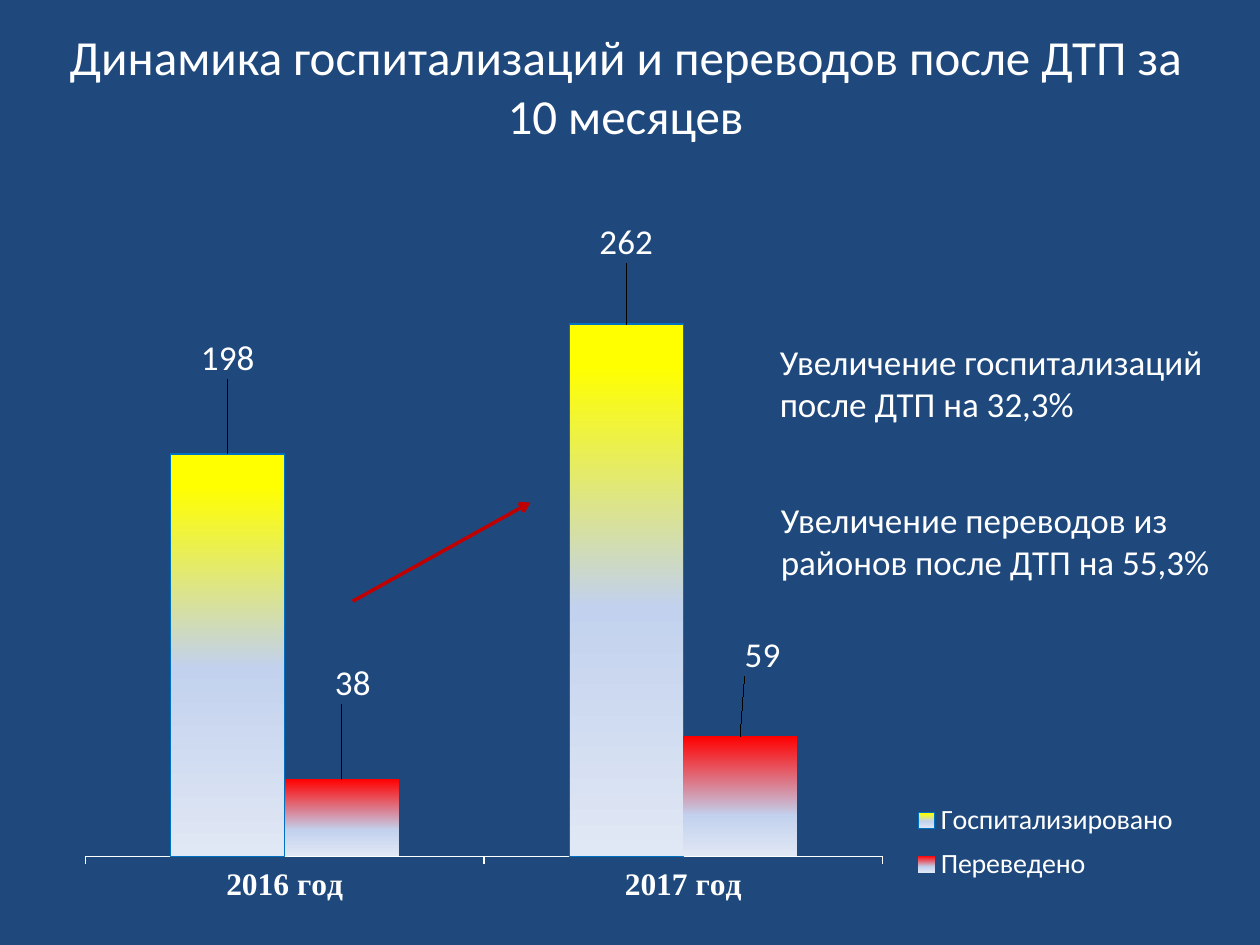
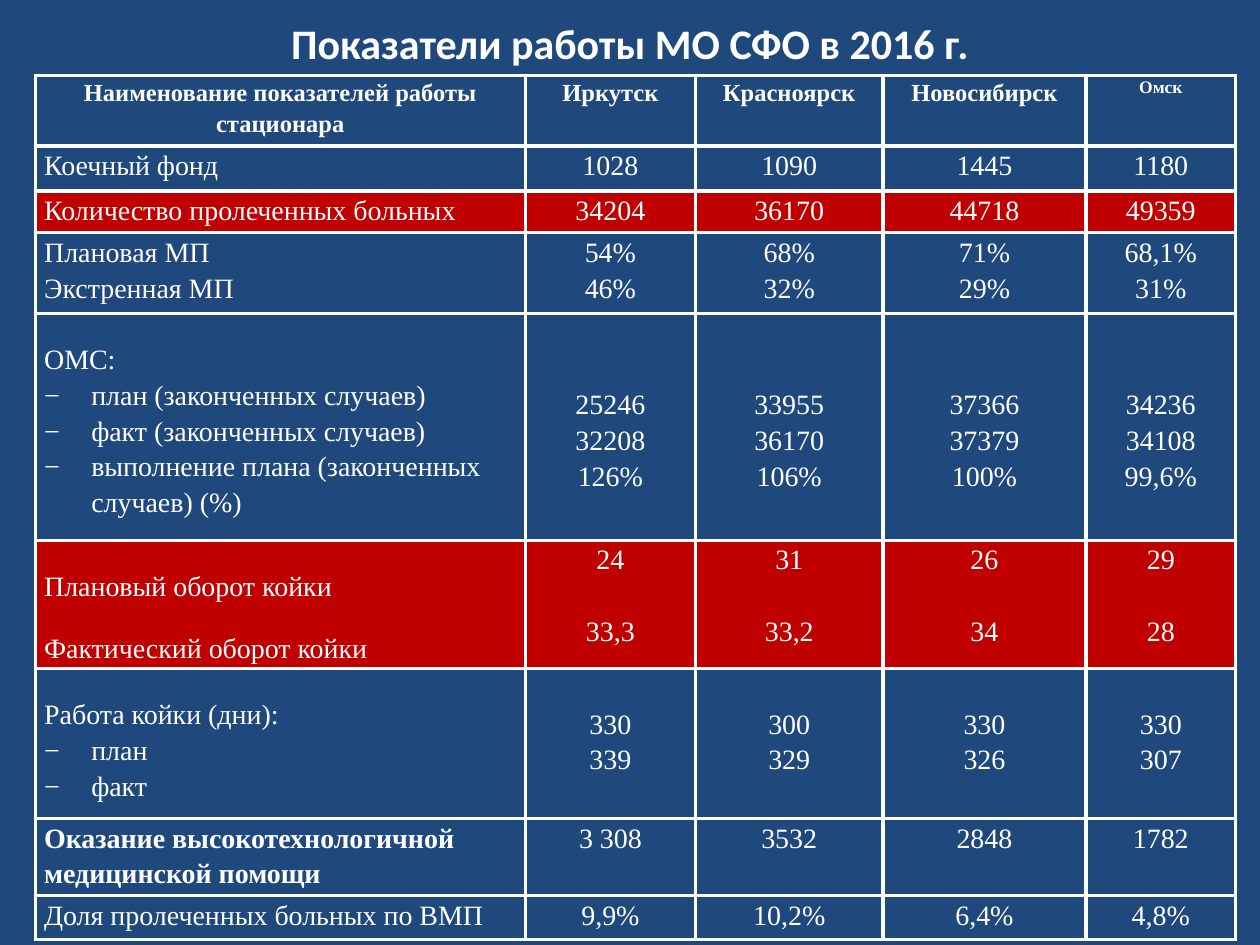
from lxml import etree
from pptx import Presentation
from pptx import util as u
from pptx.chart import data as cd
from pptx.dml.color import RGBColor
from pptx.enum import chart as ch, shapes, text
from pptx.oxml import ns

COLORS = {
    "ground": "1F497D", "ink": "FFFFFF", "accent": "C00000", "outline": "0070C0",
    "yellow": "FFFF00", "red": "FF0000", "haze": "C2D1ED", "pale": "E1E8F5",
}
SANS, SERIF = "Calibri", "Times New Roman"
CENTER = text.PP_ALIGN.CENTER
BLANK_LINE = u.Pt(20.5)
CELL_TEXT = {"size": 16, "face": SERIF, "spacing": 1.15}


def rgb(name):
    return RGBColor.from_string(COLORS[name])


def add_xml(parent, tag, **attributes):
    return etree.SubElement(parent, ns.qn(tag), attributes)


def set_font(font, size, face=SANS, bold=False):
    font.size, font.name, font.bold = u.Pt(size), face, bold
    font.color.rgb = rgb("ink")


def write(frame, lines, size=20, face=SANS, bold=False, align=None,
          spacing=None, first_spacing=None, gap=None, bullets=False):
    for index, line in enumerate(lines):
        paragraph = frame.paragraphs[0] if index == 0 else frame.add_paragraph()
        paragraph.alignment = align
        paragraph.line_spacing = first_spacing if first_spacing and index == 0 else spacing
        if index and gap:
            paragraph.space_before = gap
        run = paragraph.add_run()
        run.text = line
        set_font(run.font, size, face, bold)
        if index and bullets:
            properties = paragraph._p.get_or_add_pPr()
            properties.set("marL", str(u.Cm(0.95)))
            properties.set("indent", str(-u.Cm(0.95)))
            add_xml(properties, "a:buFont", typeface=face)
            add_xml(properties, "a:buChar", char="−")


def place_by_layout(element, after, **fractions):
    for old in element.findall(ns.qn("c:layout")):
        element.remove(old)
    layout = etree.Element(ns.qn("c:layout"))
    manual = add_xml(layout, "c:manualLayout")
    for key, value in fractions.items():
        add_xml(manual, f"c:{key}", val=str(value))
    if after:
        element.find(ns.qn(after)).addnext(layout)
    else:
        element.insert(0, layout)


class Deck:
    def __init__(self):
        self.prs = Presentation()
        self.prs.slide_width, self.prs.slide_height = u.Cm(25.4), u.Cm(19.05)
        ground = self.prs.slide_master.background.fill
        ground.solid()
        ground.fore_color.rgb = rgb("ground")
        self.slide = None

    def new_slide(self, heading, box, **style):
        self.slide = self.prs.slides.add_slide(self.prs.slide_layouts[5])
        title = self.slide.shapes.title
        title.left, title.top, title.width, title.height = map(u.Cm, box)
        frame = title.text_frame
        frame.auto_size = text.MSO_AUTO_SIZE.NONE
        frame.vertical_anchor = text.MSO_ANCHOR.MIDDLE
        write(frame, [heading], align=CENTER, **style)

    def note(self, wording, box):
        frame = self.slide.shapes.add_textbox(*map(u.Cm, box)).text_frame
        frame.word_wrap = True
        frame.auto_size = text.MSO_AUTO_SIZE.SHAPE_TO_FIT_TEXT
        write(frame, [wording])

    def arrow(self, start, end):
        line = self.slide.shapes.add_connector(
            shapes.MSO_CONNECTOR.STRAIGHT, *map(u.Cm, start + end))
        line.line.color.rgb = rgb("accent")
        line.line.width = u.Pt(2)
        add_xml(line.line._get_or_add_ln(), "a:tailEnd", type="arrow")
        add_xml(line._element.spPr, "a:effectLst")

    def columns(self, categories, series, box):
        numbers = cd.CategoryChartData()
        numbers.categories = categories
        for name, details in series.items():
            numbers.add_series(name, details["values"])
        chart = self.slide.shapes.add_chart(
            ch.XL_CHART_TYPE.COLUMN_CLUSTERED, *map(u.Cm, box), numbers).chart
        set_font(chart.font, 10)
        chart.has_title = False
        chart.has_legend = True
        chart.legend.position = ch.XL_LEGEND_POSITION.RIGHT
        chart.legend.include_in_layout = False
        set_font(chart.legend.font, 16)
        place_by_layout(chart.legend._element, "c:legendPos", xMode="edge", yMode="edge",
                        x=0.75, y=0.82, w=0.25, h=0.14)
        plot_area = chart._chartSpace.find(".//" + ns.qn("c:plotArea"))
        place_by_layout(plot_area, None, layoutTarget="inner", xMode="edge", yMode="edge",
                        x=0.02, y=0.03, w=0.71, h=0.88)

        scale = chart.value_axis
        scale.minimum_scale, scale.maximum_scale = 0, 300
        scale.has_major_gridlines = False
        scale.visible = False
        years = chart.category_axis
        years.major_tick_mark = ch.XL_TICK_MARK.OUTSIDE
        years.format.line.color.rgb = rgb("ink")
        set_font(years.tick_labels.font, 18, SERIF, True)

        plot = chart.plots[0]
        plot.gap_width, plot.overlap, plot.vary_by_categories = 150, 0, False
        for bars, details in zip(plot.series, series.values()):
            self.paint_bars(bars, details)

    def paint_bars(self, bars, details):
        bars.invert_if_negative = False
        bars.format.fill.gradient()
        bars.format.fill.gradient_angle = 270
        stops = bars._element.find(".//" + ns.qn("a:gsLst"))
        for stop in list(stops):
            stops.remove(stop)
        for percent, color in details["stops"]:
            stop = add_xml(stops, "a:gs", pos=str(percent * 1000))
            add_xml(stop, "a:srgbClr", val=COLORS[color])
        if "outline" in details:
            bars.format.line.color.rgb = rgb(details["outline"])
            bars.format.line.width = u.Pt(0.75)
        else:
            bars.format.line.fill.background()
        for index in range(len(details["values"])):
            label = bars.points[index].data_label
            set_font(label.font, 20)
            label.position = ch.XL_LABEL_POSITION.OUTSIDE_END
        for mark, (x, y) in zip(bars._element.iter(ns.qn("c:dLbl")), details["shifts"]):
            place_by_layout(mark, "c:idx", x=x, y=y)

    def table(self, rows, widths, heights, corner):
        grid = self.slide.shapes.add_table(
            len(rows), len(widths), *map(u.Cm, corner + (sum(widths), sum(heights)))).table
        grid.first_row = grid.horz_banding = False
        for column, width in zip(grid.columns, widths):
            column.width = u.Cm(width)
        for row, height, (label, values, style) in zip(grid.rows, heights, rows):
            row.height = u.Cm(height)
            cells = list(row.cells)
            for cell in cells:
                self.frame_cell(cell, style.get("fill"))
            write(cells[0].text_frame, label, **{**CELL_TEXT, **style.get("label", {})})
            look = {**CELL_TEXT, "align": CENTER, **style.get("value", {})}
            for cell, value in zip(cells[1:], values):
                cell.margin_top = BLANK_LINE * style.get("lead", 0)
                if cell is cells[-1]:
                    look.update(style.get("last", {}))
                write(cell.text_frame, value.split("|"), **look)

    def frame_cell(self, cell, fill):
        cell.margin_left = cell.margin_right = u.Cm(0.18)
        cell.margin_top = cell.margin_bottom = 0
        if fill:
            cell.fill.solid()
            cell.fill.fore_color.rgb = rgb(fill)
        else:
            cell.fill.background()
        properties = cell._tc.get_or_add_tcPr()
        for index, side in enumerate("LRTB"):
            border = etree.Element(ns.qn(f"a:ln{side}"), w=str(u.Pt(2.25)))
            add_xml(add_xml(border, "a:solidFill"), "a:srgbClr", val=COLORS["ink"])
            properties.insert(index, border)


def build_dynamics(deck):
    deck.new_slide("Динамика госпитализаций и переводов после ДТП за 10 месяцев",
                   (0.71, 0.33, 23.8, 2.79), size=28)
    patients = {
        "Госпитализировано": {
            "values": (198, 262), "outline": "outline",
            "stops": [(8, "yellow"), (53, "haze"), (100, "pale")],
            "shifts": [(0, -0.1), (0, -0.08)],
        },
        "Переведено": {
            "values": (38, 59),
            "stops": [(0, "red"), (66, "haze"), (100, "pale")],
            "shifts": [(0.01, -0.1), (0.02, -0.08)],
        },
    }
    deck.columns(["2016 год", "2017 год"], patients, (1.27, 4.45, 22.63, 14.07))
    deck.note("Увеличение госпитализаций после ДТП на 32,3%", (15.47, 6.73, 9.8, 1.96))
    deck.note("Увеличение переводов из районов после ДТП на 55,3%", (15.49, 9.93, 9.4, 1.96))
    deck.arrow((7.11, 12.12), (10.69, 10.13))


def build_indicators(deck):
    deck.new_slide("Показатели работы МО СФО в 2016 г.", (1.27, 0, 22.86, 1.73),
                   size=24, bold=True)
    header = {"size": 14, "bold": True}
    listed = {"first_spacing": 2.0, "bullets": True}
    rows = [
        (["Наименование показателей работы стационара"],
         ["Иркутск", "Красноярск", "Новосибирск", "Омск"],
         {"label": {**header, "align": CENTER}, "value": header, "last": {"size": 10}}),
        (["Коечный фонд"], ["1028", "1090", "1445", "1180"], {}),
        (["Количество пролеченных больных"], ["34204", "36170", "44718", "49359"],
         {"fill": "accent"}),
        (["Плановая МП", "Экстренная МП"],
         ["54%|46%", "68%|32%", "71%|29%", "68,1%|31%"], {}),
        (["ОМС:", "план (законченных случаев)", "факт (законченных случаев)",
          "выполнение плана (законченных случаев) (%)"],
         ["25246|32208|126%", "33955|36170|106%", "37366|37379|100%", "34236|34108|99,6%"],
         {"label": listed, "lead": 2}),
        (["Плановый оборот койки", "Фактический оборот койки"],
         ["24|33,3", "31|33,2", "26|34", "29|28"],
         {"fill": "accent", "label": {"spacing": 2.0}, "value": {"gap": BLANK_LINE}}),
        (["Работа койки (дни):", "план", "факт"],
         ["330|339", "300|329", "330|326", "330|307"], {"label": listed, "lead": 1}),
        (["Оказание высокотехнологичной медицинской помощи"],
         ["3 308", "3532", "2848", "1782"], {"label": {"bold": True}}),
        (["Доля пролеченных больных по ВМП"], ["9,9%", "10,2%", "6,4%", "4,8%"], {}),
    ]
    deck.table(rows,
               widths=(9.88, 3.43, 3.78, 4.09, 3.02),
               heights=(1.42, 0.91, 0.84, 1.63, 4.57, 2.59, 3.02, 1.55, 0.89),
               corner=(0.71, 1.52))


def main():
    deck = Deck()
    build_dynamics(deck)
    build_indicators(deck)
    deck.prs.save("out.pptx")


if __name__ == "__main__":
    main()
